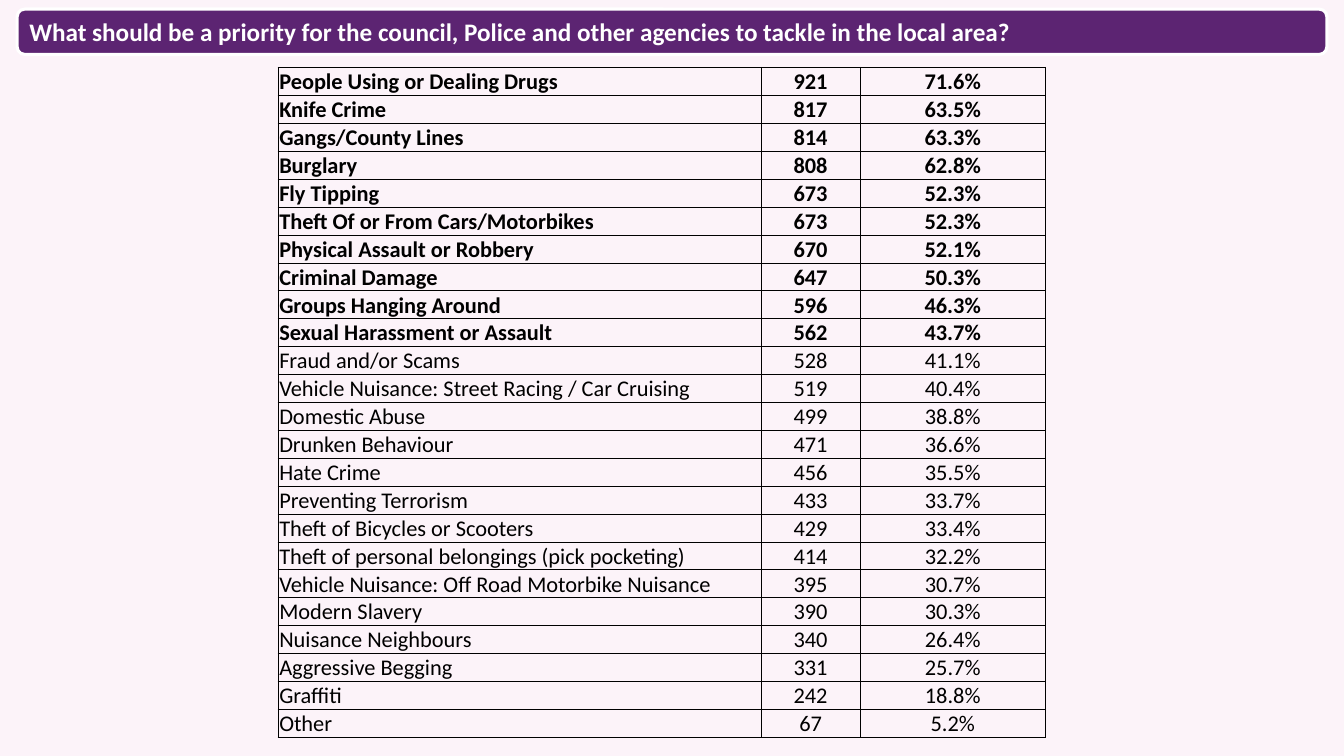
from dataclasses import dataclass

from lxml.etree import SubElement
from pptx import Presentation
from pptx.dml.color import RGBColor as RGB
from pptx.enum.shapes import MSO_SHAPE as SHAPE
from pptx.enum.text import MSO_ANCHOR as ANCHOR, MSO_AUTO_SIZE as AUTO, PP_ALIGN as ALIGN
from pptx.oxml.ns import qn
from pptx.util import Inches, Pt

TITLE = "What should be a priority for the council, Police and other agencies to tackle in the local area?"
PRIORITIES = [
    ("People Using or Dealing Drugs", "921", "71.6%"),
    ("Knife Crime", "817", "63.5%"),
    ("Gangs/County Lines", "814", "63.3%"),
    ("Burglary", "808", "62.8%"),
    ("Fly Tipping", "673", "52.3%"),
    ("Theft Of or From Cars/Motorbikes", "673", "52.3%"),
    ("Physical Assault or Robbery", "670", "52.1%"),
    ("Criminal Damage", "647", "50.3%"),
    ("Groups Hanging Around", "596", "46.3%"),
    ("Sexual Harassment or Assault", "562", "43.7%"),
    ("Fraud and/or Scams", "528", "41.1%"),
    ("Vehicle Nuisance: Street Racing / Car Cruising", "519", "40.4%"),
    ("Domestic Abuse", "499", "38.8%"),
    ("Drunken Behaviour", "471", "36.6%"),
    ("Hate Crime", "456", "35.5%"),
    ("Preventing Terrorism", "433", "33.7%"),
    ("Theft of Bicycles or Scooters", "429", "33.4%"),
    ("Theft of personal belongings (pick pocketing)", "414", "32.2%"),
    ("Vehicle Nuisance: Off Road Motorbike Nuisance", "395", "30.7%"),
    ("Modern Slavery", "390", "30.3%"),
    ("Nuisance Neighbours", "340", "26.4%"),
    ("Aggressive Begging", "331", "25.7%"),
    ("Graffiti", "242", "18.8%"),
    ("Other", "67", "5.2%"),
]
TOP_COUNT = 10  # leading priorities shown in bold
COL_WIDTHS = (4.79, 0.98, 1.84)
TABLE_LEFT, TABLE_TOP, TABLE_HEIGHT = 2.76, 0.67, 6.56
THICK, THIN = 1, 0.5
VERTICAL_RULES = (THICK, THICK, THIN, THICK)


@dataclass(frozen=True)
class Theme:
    font: str = "Calibri"
    title_size: int = 18
    body_size: int = 16
    background: str = "FCF3F9"
    banner: str = "5C2472"
    light: str = "FFFFFF"
    dark: str = "000000"


THEME = Theme()


def style(p, size, color, bold):
    p.font.name, p.font.size, p.font.bold = THEME.font, Pt(size), bold
    p.font.color.rgb = RGB.from_string(color)


def set_borders(cell, **widths):
    """Draw cell edges; must run before the cell's fill is set, as the schema puts lines first."""
    tc_pr = cell._tc.get_or_add_tcPr()
    for side, width in widths.items():
        ln = SubElement(tc_pr, qn(f"a:ln{side}"), w=str(Pt(width)))
        fill = SubElement(ln, qn("a:solidFill"))
        SubElement(fill, qn("a:srgbClr"), val=THEME.dark)


def add_banner(s):
    sp = s.shapes.add_shape(SHAPE.ROUNDED_RECTANGLE, Inches(0.17), Inches(0.09),
                            Inches(12.99), Inches(0.45))
    sp.shadow.inherit = False
    sp.fill.solid()
    sp.fill.fore_color.rgb = RGB.from_string(THEME.banner)
    sp.line.color.rgb = RGB.from_string(THEME.light)
    sp.line.width = Pt(2.25)
    tf = sp.text_frame
    tf.word_wrap = True
    tf.auto_size = AUTO.SHAPE_TO_FIT_TEXT
    tf.vertical_anchor = ANCHOR.MIDDLE
    p = tf.paragraphs[0]
    p.text, p.alignment = TITLE, ALIGN.LEFT
    style(p, THEME.title_size, THEME.light, True)


def fill_cell(cell, text, row, col):
    last = len(PRIORITIES) - 1
    set_borders(cell, L=VERTICAL_RULES[col], R=VERTICAL_RULES[col + 1],
                T=THICK if row == 0 else THIN, B=THICK if row == last else THIN)
    cell.fill.background()
    cell.margin_left = cell.margin_right = cell.margin_top = Inches(0.01)
    cell.margin_bottom = 0
    cell.vertical_anchor = ANCHOR.MIDDLE if col else ANCHOR.BOTTOM
    p = cell.text_frame.paragraphs[0]
    p.text, p.alignment = text, ALIGN.CENTER if col else ALIGN.LEFT
    style(p, THEME.body_size, THEME.dark, row < TOP_COUNT)


def add_priorities(s):
    table = s.shapes.add_table(len(PRIORITIES), len(COL_WIDTHS), Inches(TABLE_LEFT), Inches(TABLE_TOP),
                               Inches(sum(COL_WIDTHS)), Inches(TABLE_HEIGHT)).table
    table.first_row = table.horz_banding = False
    for column, width in zip(table.columns, COL_WIDTHS):
        column.width = Inches(width)
    for row, record in enumerate(PRIORITIES):
        table.rows[row].height = Inches(TABLE_HEIGHT / len(PRIORITIES))
        for col, text in enumerate(record):
            fill_cell(table.cell(row, col), text, row, col)


def main():
    prs = Presentation()
    prs.slide_width, prs.slide_height = Inches(13.33), Inches(7.5)
    s = prs.slides.add_slide(prs.slide_layouts[6])
    s.background.fill.solid()
    s.background.fill.fore_color.rgb = RGB.from_string(THEME.background)
    add_banner(s)
    add_priorities(s)
    prs.save("out.pptx")


if __name__ == "__main__":
    main()
